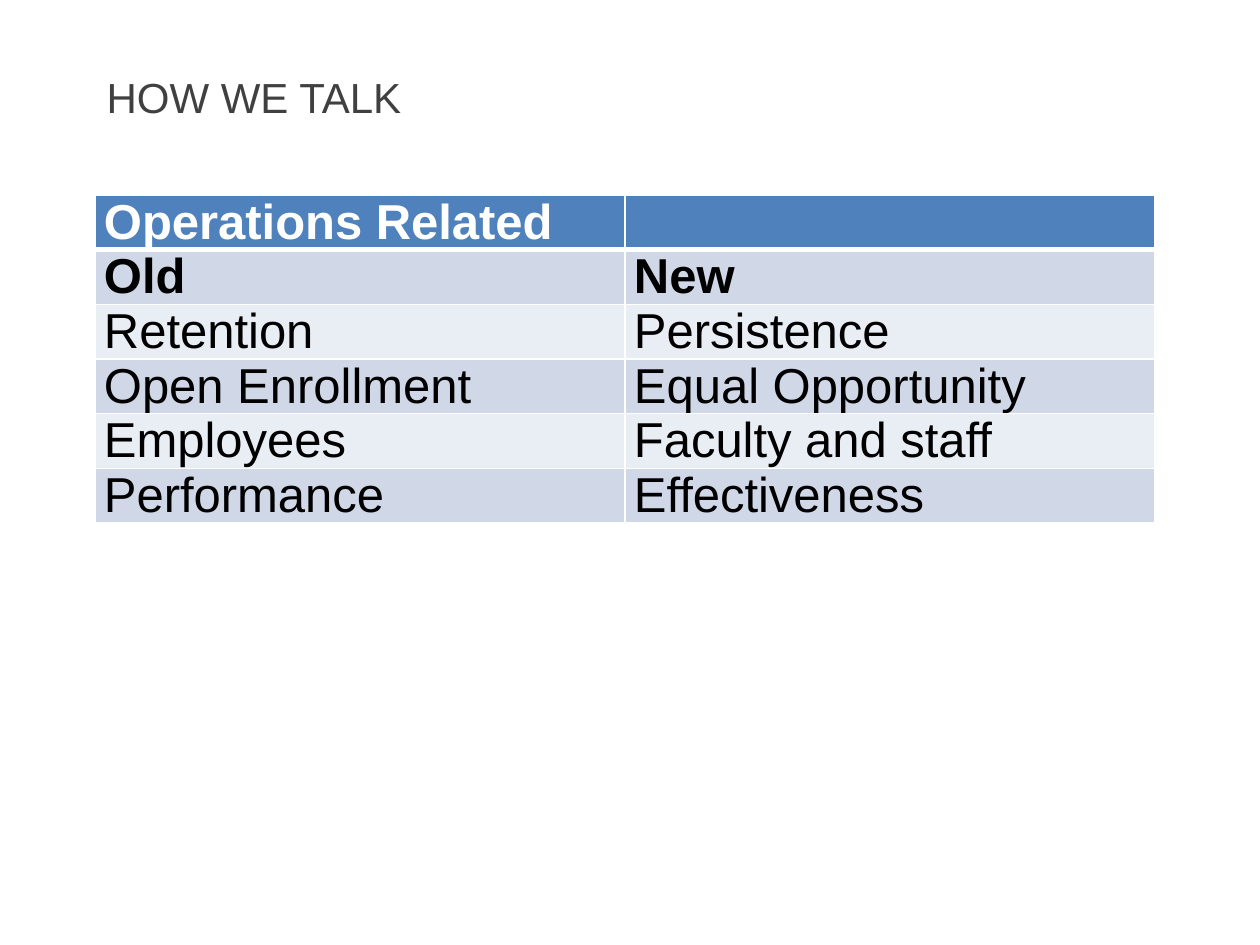
from dataclasses import dataclass

import pptx
import pptx.dml.color
import pptx.enum.text
import pptx.oxml
import pptx.oxml.ns
import pptx.util

EMU_PER_PX = 914400 / 126


@dataclass(frozen=True)
class Theme:
    font: str = "Arial"
    title_size: int = 24
    table_size: int = 28
    title: str = "404040"
    text: str = "000000"
    header_text: str = "FFFFFF"
    header_fill: str = "4F81BD"
    bands: tuple[str, str] = ("D0D8E8", "E9EDF4")
    border: str = "FFFFFF"


@dataclass(frozen=True)
class Row:
    cells: tuple[str, str]
    bold: bool = False
    header: bool = False


THEME = Theme()
ROWS = (
    Row(("Operations Related", ""), bold=True, header=True),
    Row(("Old", "New"), bold=True),
    Row(("Retention", "Persistence")),
    Row(("Open Enrollment", "Equal Opportunity")),
    Row(("Employees", "Faculty and staff")),
    Row(("Performance", "Effectiveness")),
)


def px(length: int) -> pptx.util.Emu:
    return pptx.util.Emu(round(length * EMU_PER_PX))


def rgb(value: str) -> pptx.dml.color.RGBColor:
    return pptx.dml.color.RGBColor.from_string(value)


def set_font(para, size: int, color: str, bold: bool = False) -> None:
    para.font.name = THEME.font
    para.font.size = pptx.util.Pt(size)
    para.font.bold = bold
    para.font.color.rgb = rgb(color)


def set_borders(cell, widths: dict[str, int]) -> None:
    """Add cell borders, with widths in points, ahead of the cell fill."""
    properties = cell._tc.get_or_add_tcPr()
    for index, (side, width) in enumerate(widths.items()):
        line = pptx.oxml.parse_xml(
            f'<a:{side} {pptx.oxml.ns.nsdecls("a")} w="{pptx.util.Pt(width)}">'
            f'<a:solidFill><a:srgbClr val="{THEME.border}"/></a:solidFill>'
            f'</a:{side}>'
        )
        properties.insert(index, line)


def draw_title(page, text: str) -> None:
    title = page.shapes.title
    title.left, title.top, title.width, title.height = px(94), px(42), px(904), px(110)
    frame = title.text_frame
    frame.text = text
    frame.auto_size = pptx.enum.text.MSO_AUTO_SIZE.NONE
    frame.vertical_anchor = pptx.enum.text.MSO_ANCHOR.MIDDLE
    para = frame.paragraphs[0]
    para.alignment = pptx.enum.text.PP_ALIGN.LEFT
    set_font(para, THEME.title_size, THEME.title)


def draw_cell(cell, text: str, row: Row, fill: str, top: int, bottom: int) -> None:
    cell.margin_left = cell.margin_right = px(9)
    cell.margin_top = cell.margin_bottom = 0
    cell.fill.solid()
    cell.fill.fore_color.rgb = rgb(fill)
    set_borders(cell, {"lnL": 1, "lnR": 1, "lnT": top, "lnB": bottom})
    if text:
        cell.text = text
    color = THEME.header_text if row.header else THEME.text
    set_font(cell.text_frame.paragraphs[0], THEME.table_size, color, row.bold)


def draw_table(page, rows: tuple[Row, ...]) -> None:
    row_height = 52
    frame = page.shapes.add_table(
        len(rows), 2, px(95), px(195), px(1060), px(row_height * len(rows))
    )
    table = frame.table
    for r, row in enumerate(rows):
        table.rows[r].height = px(row_height)
        fill = THEME.header_fill if row.header else THEME.bands[(r - 1) % 2]
        # The rule under the header is heavier than the others
        top = 3 if r and rows[r - 1].header else 1
        bottom = 3 if row.header else 1
        for c, text in enumerate(row.cells):
            draw_cell(table.cell(r, c), text, row, fill, top, bottom)


def main() -> None:
    deck = pptx.Presentation()
    deck.slide_width, deck.slide_height = px(1260), px(945)
    # Title-only layout
    page = deck.slides.add_slide(deck.slide_layouts[5])
    draw_title(page, "HOW WE TALK")
    draw_table(page, ROWS)
    deck.save("out.pptx")


if __name__ == "__main__":
    main()
